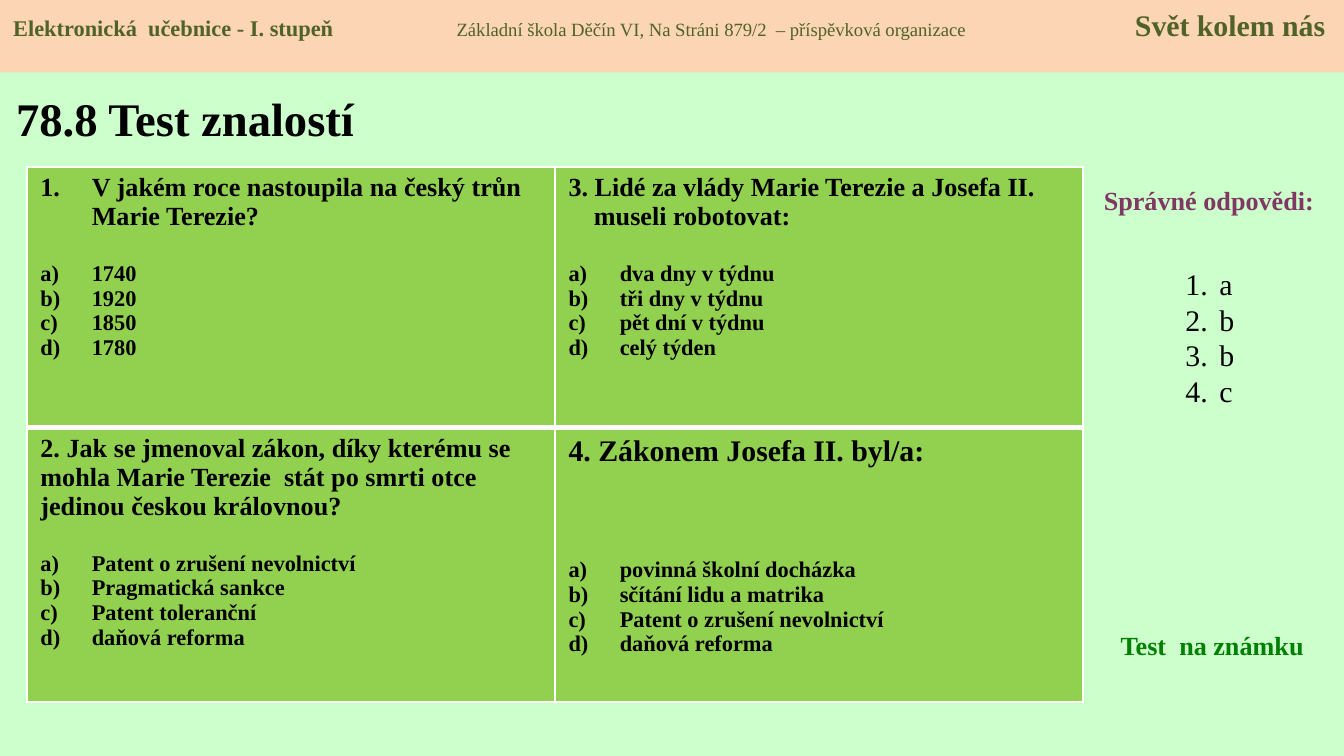
"""Builds a knowledge test slide with four questions and their answers."""
from lxml import etree
from pptx import Presentation
from pptx.dml.color import RGBColor
from pptx.enum.shapes import MSO_SHAPE
from pptx.enum.text import MSO_ANCHOR, MSO_AUTO_SIZE, PP_ALIGN
from pptx.oxml.ns import qn
from pptx.util import Cm, Pt

RECTANGLE = MSO_SHAPE.RECTANGLE
TOP, MIDDLE = MSO_ANCHOR.TOP, MSO_ANCHOR.MIDDLE
LEFT, CENTER = PP_ALIGN.LEFT, PP_ALIGN.CENTER
FIXED = MSO_AUTO_SIZE.NONE

FONT = "Times New Roman"
MINT = RGBColor(0xCC, 0xFF, 0xCC)
PEACH = RGBColor(0xFC, 0xD5, 0xB5)
LIME = RGBColor(0x92, 0xD0, 0x50)
OLIVE = RGBColor(0x4F, 0x62, 0x28)
PLUM = RGBColor(0x81, 0x37, 0x63)
GREEN = RGBColor(0x00, 0x80, 0x00)
BLACK = RGBColor(0, 0, 0)

TITLE = "78.8 Test znalostí"
HEADER = [
    ("Elektronická  učebnice - I. stupeň", 12, True),
    ("\tZákladní škola Děčín VI, Na Stráni 879/2  – příspěvková organizace", 10, False),
    ("\tSvět kolem nás", 16, True),
]
HEADER_TABS = [8.38, 21.2]
LABELS = [
    ("Správné odpovědi:", (20.45, 3.35, 4.8, 0.86), CENTER, PLUM),
    ("Test  na známku", (20.93, 11.76, 3.99, 0.86), LEFT, GREEN),
]
CORRECT = ["a", "b", "b", "c"]
QUESTIONS = [
    {
        "lines": ["V jakém roce nastoupila na český trůn Marie Terezie?"],
        "numbered": True, "size": 14, "gap": 16,
        "options": ["1740", "1920", "1850", "1780"],
    },
    {
        "lines": ["3. Lidé za vlády Marie Terezie a Josefa II.", "museli robotovat:"],
        "numbered": False, "size": 14, "gap": 16,
        "options": ["dva dny v týdnu", "tři dny v týdnu", "pět dní v týdnu", "celý týden"],
    },
    {
        "lines": ["2. Jak se jmenoval zákon, díky kterému se mohla Marie Terezie  stát "
                  "po smrti otce jedinou českou královnou?"],
        "numbered": False, "size": 14, "gap": 16,
        "options": ["Patent o zrušení nevolnictví", "Pragmatická sankce",
                    "Patent toleranční", "daňová reforma"],
    },
    {
        "lines": ["4. Zákonem Josefa II. byl/a:"],
        "numbered": False, "size": 16, "gap": 48,
        "options": ["povinná školní docházka", "sčítání lidu a matrika",
                    "Patent o zrušení nevolnictví", "daňová reforma"],
    },
]
COLUMN_WIDTH = 9.98
ROW_HEIGHTS = [4.93, 5.18]
ROW_BORDERS = [{"L": 1, "R": 1, "T": 1, "B": 3}, {"L": 1, "R": 1, "T": 3, "B": 1}]
QUESTION_INDENT, ANSWER_INDENT, CONTINUATION_INDENT = 0.97, 0.64, 0.48


def style(run, size, color, bold):
    run.font.name = FONT
    run.font.size = Pt(size)
    run.font.bold = bold
    run.font.color.rgb = color


def write(paragraph, text, size, color=BLACK, bold=True):
    paragraph.text = text
    style(paragraph.runs[0], size, color, bold)


def indent(paragraph, margin, hanging=0):
    properties = paragraph._p.get_or_add_pPr()
    properties.set("marL", str(Cm(margin)))
    properties.set("indent", str(-Cm(hanging)))
    return properties


def number(paragraph, scheme, margin):
    properties = indent(paragraph, margin, margin)
    etree.SubElement(properties, qn("a:buFont"), typeface=FONT)
    etree.SubElement(properties, qn("a:buAutoNum"), type=scheme)


def fill_paragraphs(frame, count):
    for _ in range(count - 1):
        frame.add_paragraph()
    return frame.paragraphs


def place(shape, left, top, width, height):
    shape.left, shape.top = Cm(left), Cm(top)
    shape.width, shape.height = Cm(width), Cm(height)


def border(cell, widths):
    properties = cell._tc.get_or_add_tcPr()
    for position, (side, width) in enumerate(widths.items()):
        line = etree.Element(qn(f"a:ln{side}"), w=str(Pt(width)))
        solid = etree.SubElement(line, qn("a:solidFill"))
        etree.SubElement(solid, qn("a:srgbClr"), val="FFFFFF")
        properties.insert(position, line)


def write_question(cell, question):
    lines, options = question["lines"], question["options"]
    paragraphs = fill_paragraphs(cell.text_frame, len(lines) + len(options))
    for row, (paragraph, line) in enumerate(zip(paragraphs, lines)):
        write(paragraph, line, question["size"])
        if question["numbered"]:
            number(paragraph, "arabicPeriod", QUESTION_INDENT)
        elif row:
            indent(paragraph, CONTINUATION_INDENT)
    choices = paragraphs[len(lines):]
    for paragraph, option in zip(choices, options):
        write(paragraph, option, 12)
        number(paragraph, "alphaLcParenR", QUESTION_INDENT)
    choices[0].space_before = Pt(question["gap"])


def add_header(slide):
    banner = slide.shapes.add_shape(RECTANGLE, 0, 0, Cm(25.4), Cm(1.37))
    banner.shadow.inherit = False
    banner.fill.solid()
    banner.fill.fore_color.rgb = PEACH
    banner.line.fill.background()
    banner.text_frame.vertical_anchor = TOP
    paragraph = banner.text_frame.paragraphs[0]
    paragraph.alignment = LEFT
    stops = etree.SubElement(paragraph._p.get_or_add_pPr(), qn("a:tabLst"))
    for stop in HEADER_TABS:
        etree.SubElement(stops, qn("a:tab"), pos=str(Cm(stop)), algn="l")
    for text, size, bold in HEADER:
        run = paragraph.add_run()
        run.text = text
        style(run, size, OLIVE, bold)


def add_questions(slide):
    table = slide.shapes.add_table(
        2, 2, Cm(0.51), Cm(3.15), Cm(2 * COLUMN_WIDTH), Cm(sum(ROW_HEIGHTS))).table
    for column in table.columns:
        column.width = Cm(COLUMN_WIDTH)
    for row, height in zip(table.rows, ROW_HEIGHTS):
        row.height = Cm(height)
    for index, question in enumerate(QUESTIONS):
        row, column = divmod(index, 2)
        cell = table.cell(row, column)
        cell.fill.solid()
        cell.fill.fore_color.rgb = LIME
        border(cell, ROW_BORDERS[row])
        write_question(cell, question)


def add_correct_answers(answers):
    place(answers, 22.15, 4.19, 1.4, 5.05)
    frame = answers.text_frame
    frame.auto_size = FIXED
    frame.vertical_anchor = TOP
    frame.margin_top = Cm(0.84)
    for paragraph, letter in zip(fill_paragraphs(frame, len(CORRECT)), CORRECT):
        write(paragraph, letter, 16, bold=False)
        paragraph.space_before = Pt(0)
        paragraph.line_spacing = Pt(19)
        number(paragraph, "arabicPeriod", ANSWER_INDENT)


def main():
    deck = Presentation()
    deck.slide_width, deck.slide_height = Cm(25.4), Cm(14.28)
    slide = deck.slides.add_slide(deck.slide_layouts[1])
    slide.background.fill.solid()
    slide.background.fill.fore_color.rgb = MINT

    title = slide.shapes.title
    place(title, 0.05, 1.4, 8.1, 1.65)
    title.text_frame.auto_size = FIXED
    title.text_frame.vertical_anchor = MIDDLE
    write(title.text_frame.paragraphs[0], TITLE, 25)
    title.text_frame.paragraphs[0].alignment = LEFT

    add_questions(slide)
    add_correct_answers(slide.placeholders[1])
    for text, box, alignment, color in LABELS:
        label = slide.shapes.add_textbox(*map(Cm, box)).text_frame
        label.word_wrap = True
        write(label.paragraphs[0], text, 14, color)
        label.paragraphs[0].alignment = alignment
    add_header(slide)
    deck.save("out.pptx")


if __name__ == "__main__":
    main()
